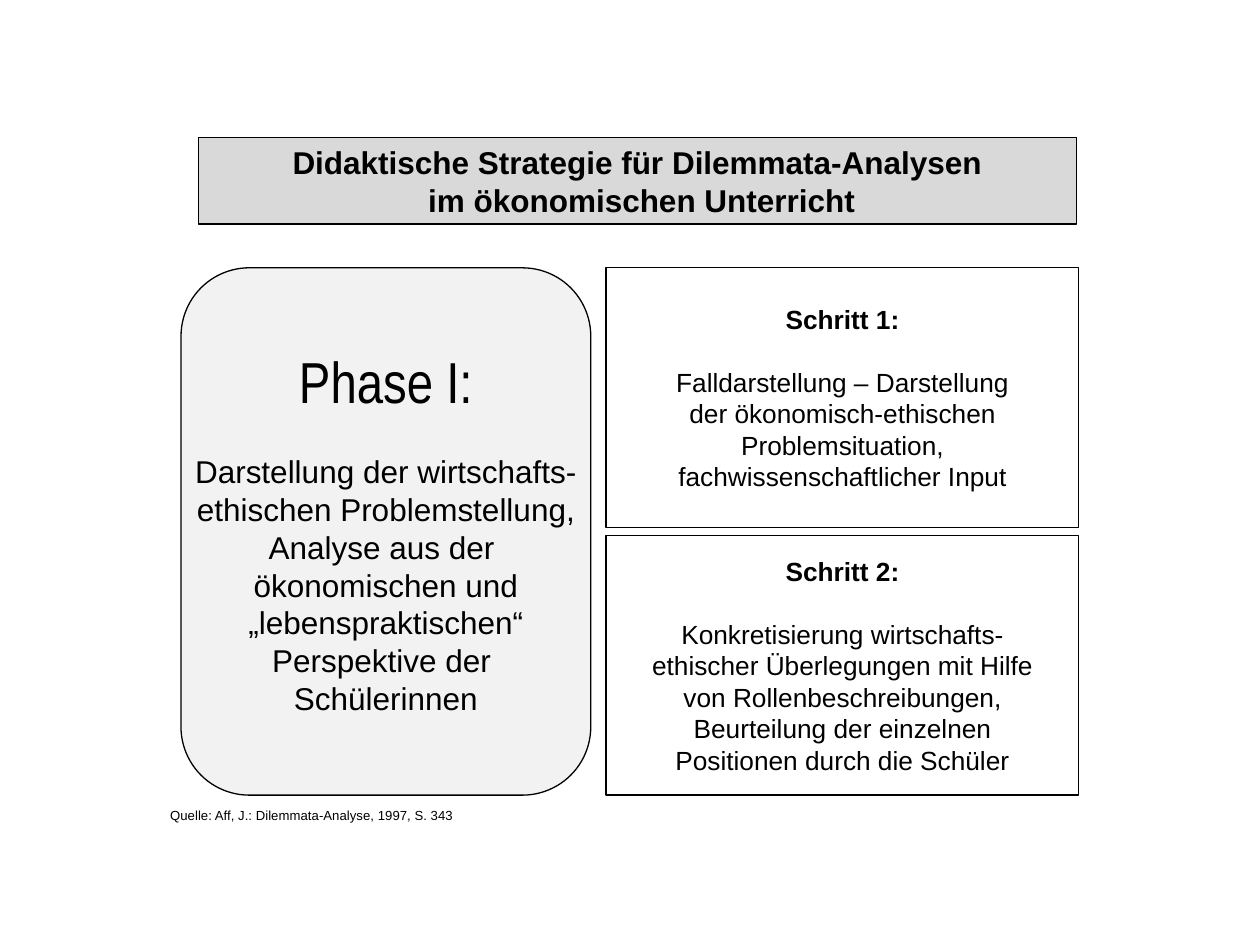
from pptx import Presentation
from pptx.dml.color import RGBColor
from pptx.enum import shapes, text
from pptx.util import Cm, Pt

# Content
TITLE = ["Didaktische Strategie für Dilemmata-Analysen\v im ökonomischen Unterricht"]
PHASE = ("Phase I:", [
    "Darstellung der wirtschafts-",
    "ethischen Problemstellung,",
    "Analyse aus der ",
    "ökonomischen und",
    "„lebenspraktischen“",
    "Perspektive der ",
    "Schülerinnen",
])
STEPS = [
    ("Schritt 1:", [
        "Falldarstellung – Darstellung",
        "der ökonomisch-ethischen",
        "Problemsituation,",
        "fachwissenschaftlicher Input",
    ]),
    ("Schritt 2:", [
        "Konkretisierung wirtschafts-",
        "ethischer Überlegungen mit Hilfe",
        "von Rollenbeschreibungen,",
        "Beurteilung der einzelnen",
        "Positionen durch die Schüler",
    ]),
]
SOURCE = ["Quelle: Aff, J.: Dilemmata-Analyse, 1997, S. 343"]

COLORS = {"ink": "000000", "title": "D9D9D9", "phase": "F2F2F2", "step": "FFFFFF"}

# Layout in centimetres
TOP, HEIGHT = 5.4, 10.63
STEP_LEFT, STEP_WIDTH, STEP_GAP = 12.22, 9.53, 0.17
STEP_HEIGHT = (HEIGHT - STEP_GAP) / len(STEPS)

prs = Presentation()
prs.slide_width, prs.slide_height = Cm(25.4), Cm(19.05)
slide = prs.slides.add_slide(prs.slide_layouts[6])


def color(name):
    return RGBColor.from_string(COLORS[name])


def write(frame, lines, size, font="Arial", bold=False, centred=True, gap=0):
    """Append lines as paragraphs; gap is the space after each, in points."""
    for line in lines:
        first = frame.paragraphs[0]
        paragraph = frame.add_paragraph() if first.text else first
        paragraph.text = line
        paragraph.alignment = text.PP_ALIGN.CENTER if centred else text.PP_ALIGN.LEFT
        paragraph.space_after = Pt(gap)
        for run in paragraph.runs:
            run.font.size, run.font.name, run.font.bold = Pt(size), font, bold
            run.font.color.rgb = color("ink")


def add_panel(kind, left, top, width, height, fill):
    panel = slide.shapes.add_shape(kind, Cm(left), Cm(top), Cm(width), Cm(height))
    panel.shadow.inherit = False
    panel.fill.solid()
    panel.fill.fore_color.rgb = color(fill)
    panel.line.color.rgb = color("ink")
    panel.line.width = Pt(0.75)
    panel.text_frame.word_wrap = False
    panel.text_frame.vertical_anchor = text.MSO_ANCHOR.MIDDLE
    return panel.text_frame


RECTANGLE = shapes.MSO_SHAPE.RECTANGLE

# Title bar
write(add_panel(RECTANGLE, 4, 2.77, 17.7, 1.75, "title"), TITLE, 18, bold=True)

# Phase on the left
phase_name, phase_lines = PHASE
phase = add_panel(shapes.MSO_SHAPE.ROUNDED_RECTANGLE, 3.65, TOP, 8.26, HEIGHT, "phase")
write(phase, [phase_name], 33, font="Arial Narrow", gap=21)
write(phase, phase_lines, 18)

# Steps stacked on the right
for index, (step_name, step_lines) in enumerate(STEPS):
    step_top = TOP + index * (STEP_HEIGHT + STEP_GAP)
    step = add_panel(RECTANGLE, STEP_LEFT, step_top, STEP_WIDTH, STEP_HEIGHT, "step")
    write(step, [step_name], 15, bold=True, gap=18)
    write(step, step_lines, 15)

# Source note
source = slide.shapes.add_textbox(Cm(3.18), Cm(16.15), Cm(6.43), Cm(0.58)).text_frame
source.word_wrap = True
write(source, SOURCE, 7.5, centred=False)

prs.save("out.pptx")
